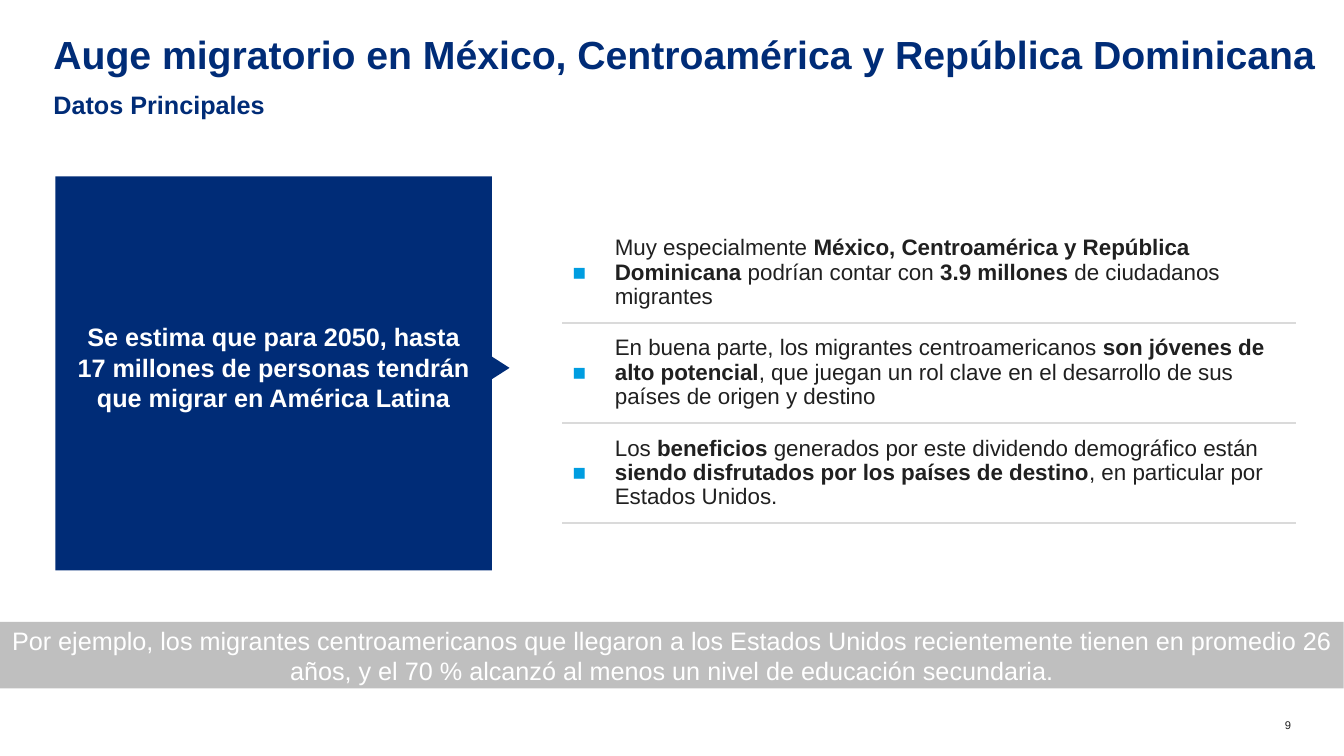
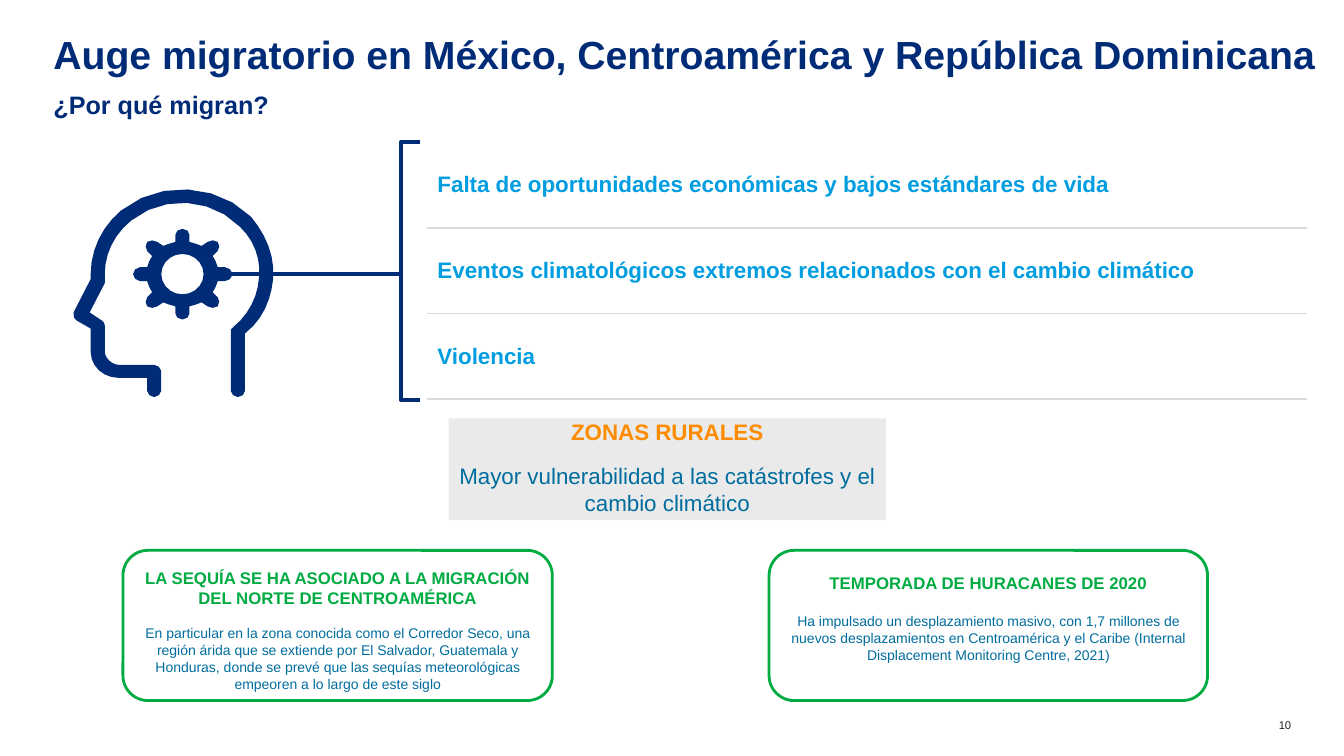
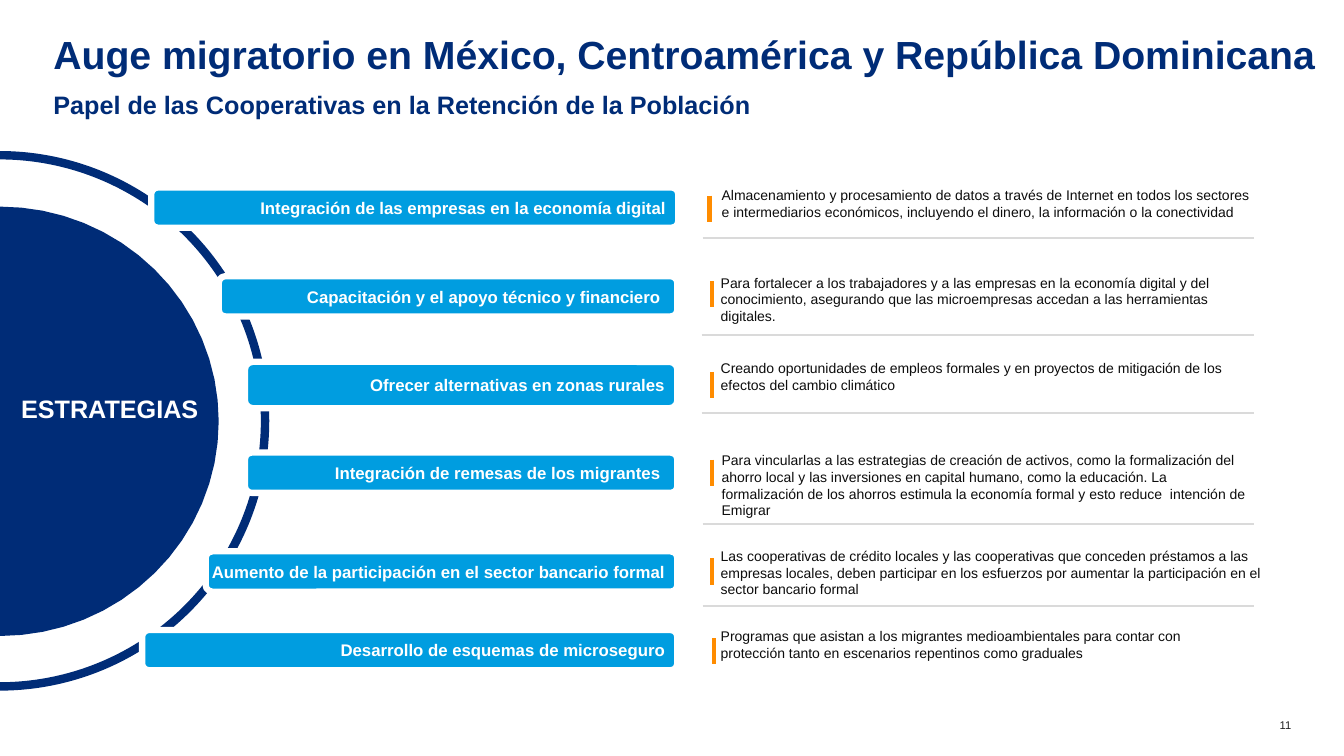
from dataclasses import dataclass
from math import cos, dist, pi, sin
from typing import NamedTuple, Optional

from lxml.etree import SubElement
from pptx import Presentation
from pptx.dml.color import RGBColor
from pptx.enum.shapes import MSO_CONNECTOR, MSO_SHAPE
from pptx.enum.text import MSO_ANCHOR, PP_ALIGN
from pptx.oxml.ns import qn
from pptx.shapes.autoshape import Shape
from pptx.shapes.connector import Connector
from pptx.slide import Slide
from pptx.table import Table, _Cell
from pptx.text.text import TextFrame, _Paragraph
from pptx.util import Inches, Pt

FONT = "Arial"
NAVY = RGBColor(0x00, 0x2C, 0x77)
SKY = RGBColor(0x00, 0x9D, 0xE0)
TEAL = RGBColor(0x00, 0x6D, 0x9E)
GREEN = RGBColor(0x00, 0xAC, 0x41)
ORANGE = RGBColor(0xFF, 0x8C, 0x00)
WHITE = RGBColor(0xFF, 0xFF, 0xFF)
INK = RGBColor(0x20, 0x20, 0x20)
DETAIL_INK = RGBColor(0x0D, 0x0D, 0x0D)
RULE_GREY = RGBColor(0xDA, 0xDA, 0xDA)
BAND_GREY = RGBColor(0xBF, 0xBF, 0xBF)
PANEL_GREY = RGBColor(0xEA, 0xEA, 0xEA)

TITLE = "Auge migratorio en México, Centroamérica y República Dominicana"
Point = tuple[float, float]


class Box(NamedTuple):
    left: float
    top: float
    width: float
    height: float


class Insets(NamedTuple):
    left: float = 0
    top: float = 0
    right: float = 0
    bottom: float = 0


class Run(NamedTuple):
    text: str
    size: float
    color: RGBColor
    bold: bool = False


@dataclass
class Para:
    runs: list[Run]
    align: PP_ALIGN = PP_ALIGN.LEFT
    gap_before: float = 0
    spacing: Optional[float] = None
    bullet: Optional[str] = None


@dataclass
class Card:
    box: Box
    heading: str
    body: str
    top_inset: float
    gap: float


@dataclass
class Strategy:
    label: str
    bar: Box
    detail: str
    detail_box: Box
    tick: Point
    rule: Optional[Point] = None


def add_bullet(paragraph: _Paragraph, symbol: str) -> None:
    properties = paragraph._p.get_or_add_pPr()
    properties.set("marL", str(Inches(0.2)))
    properties.set("indent", str(-Inches(0.2)))
    SubElement(SubElement(properties, qn("a:buClr")), qn("a:srgbClr"), val=str(SKY))
    SubElement(properties, qn("a:buFont"), typeface=FONT)
    SubElement(properties, qn("a:buChar"), char=symbol)


def write(frame: TextFrame, paras: list[Para], insets: Optional[Insets] = None,
          anchor: MSO_ANCHOR = MSO_ANCHOR.TOP, wrap: bool = True) -> None:
    frame.word_wrap = wrap
    frame.vertical_anchor = anchor
    if insets is not None:
        frame.margin_left, frame.margin_top, frame.margin_right, frame.margin_bottom = map(Inches, insets)
    for index, para in enumerate(paras):
        paragraph = frame.add_paragraph() if index else frame.paragraphs[0]
        paragraph.alignment = para.align
        if para.gap_before:
            paragraph.space_before = Pt(para.gap_before)
        if para.spacing:
            paragraph.line_spacing = para.spacing
        if para.bullet:
            add_bullet(paragraph, para.bullet)
        for piece in para.runs:
            run = paragraph.add_run()
            run.text = piece.text
            run.font.name = FONT
            run.font.size = Pt(piece.size)
            run.font.bold = piece.bold
            run.font.color.rgb = piece.color


def add_text(slide: Slide, box: Box, paras: list[Para], insets: Insets = Insets()) -> None:
    write(slide.shapes.add_textbox(*map(Inches, box)).text_frame, paras, insets)


def paint(shape: Shape, fill: Optional[RGBColor], line: Optional[RGBColor] = None,
          line_width: float = 0) -> Shape:
    shape.shadow.inherit = False
    if fill is None:
        shape.fill.background()
    else:
        shape.fill.solid()
        shape.fill.fore_color.rgb = fill
    if line is None:
        shape.line.fill.background()
    else:
        shape.line.color.rgb = line
        shape.line.width = Pt(line_width)
    return shape


def add_shape(slide: Slide, kind: MSO_SHAPE, box: Box, fill: Optional[RGBColor],
              line: Optional[RGBColor] = None, line_width: float = 0) -> Shape:
    return paint(slide.shapes.add_shape(kind, *map(Inches, box)), fill, line, line_width)


def add_line(slide: Slide, start: Point, end: Point, color: RGBColor, width: float) -> Connector:
    line = slide.shapes.add_connector(MSO_CONNECTOR.STRAIGHT, *map(Inches, start + end))
    line.line.color.rgb = color
    line.line.width = Pt(width)
    SubElement(line._element.spPr, qn("a:effectLst"))
    return line


def add_outline(slide: Slide, contours: list[list[Point]], close: bool = True) -> Shape:
    """Draw one freeform from one or more contours given in inches."""
    emu = [[(Inches(x), Inches(y)) for x, y in contour] for contour in contours]
    builder = slide.shapes.build_freeform(*emu[0][0])
    for index, contour in enumerate(emu):
        if index:
            builder.move_to(*contour[0])
        builder.add_line_segments(contour[1:], close=close)
    return builder.convert_to_shape()


def trace(start: Point, segments: list[tuple]) -> list[Point]:
    """Flatten a path: two numbers are a straight step, six a Bézier curve."""
    points = [start]
    for segment in segments:
        if len(segment) == 2:
            points.append(segment)
            continue
        x0, y0 = points[-1]
        x1, y1, x2, y2, x3, y3 = segment
        steps = 6 if dist((x0, y0), (x3, y3)) > 0.15 else 2
        for step in range(1, steps + 1):
            t = step / steps
            a, b, c, d = (1 - t) ** 3, 3 * t * (1 - t) ** 2, 3 * t * t * (1 - t), t ** 3
            points.append((a * x0 + b * x1 + c * x2 + d * x3, a * y0 + b * y1 + c * y2 + d * y3))
    return points


def ellipse(center: Point, rx: float, ry: float, start: float, end: float, steps: int) -> list[Point]:
    angles = [start + (end - start) * step / steps for step in range(steps + 1)]
    return [(center[0] + rx * cos(angle), center[1] + ry * sin(angle)) for angle in angles]


def add_grid(slide: Slide, box: Box, columns: list[float], rows: int) -> Table:
    table = slide.shapes.add_table(rows, len(columns), *map(Inches, box)).table
    table.first_row = table.horz_banding = False
    for column, width in zip(table.columns, columns):
        column.width = Inches(width)
    for index, row in enumerate(table.rows):
        row.height = Inches(box.height / rows)
        for cell in row.cells:
            rule_cell(cell, top=index > 0)
    return table


def rule_cell(cell: _Cell, top: bool) -> None:
    """Leave a cell unfilled, with horizontal rules only."""
    properties = cell._tc.get_or_add_tcPr()
    for side, ruled in (("L", False), ("R", False), ("T", top), ("B", True)):
        edge = SubElement(properties, qn(f"a:ln{side}"), w=str(Pt(1.5)))
        if ruled:
            SubElement(SubElement(edge, qn("a:solidFill")), qn("a:srgbClr"), val=str(RULE_GREY))
        else:
            SubElement(edge, qn("a:noFill"))
    cell.fill.background()


def start_slide(deck: Presentation, subtitle: str, number: int) -> Slide:
    slide = deck.slides.add_slide(deck.slide_layouts[6])
    add_text(slide, Box(0.53, 0.39, 12.67, 0.54), [Para([Run(TITLE, 28, NAVY, True)], spacing=0.8)])
    add_text(slide, Box(0.53, 0.89, 12.28, 0.35), [Para([Run(subtitle, 18, NAVY, True)])])
    add_text(slide, Box(12.5, 7.13, 0.31, 0.13), [Para([Run(str(number), 8, INK)], PP_ALIGN.RIGHT)])
    return slide


FACTS = [
    [("Muy especialmente ", False), ("México, Centroamérica y República Dominicana ", True),
     ("podrían contar con ", False), ("3.9 millones ", True), ("de ciudadanos migrantes", False)],
    [("En buena parte, los migrantes centroamericanos ", False),
     ("son jóvenes de alto potencial", True),
     (", que juegan un rol clave en el desarrollo de sus países de origen y destino", False)],
    [("Los ", False), ("beneficios ", True), ("generados por este dividendo demográfico están ", False),
     ("siendo disfrutados por los países de destino", True),
     (", en particular por Estados Unidos.", False)],
]


def build_facts(deck: Presentation) -> None:
    slide = start_slide(deck, "Datos Principales", 9)
    add_shape(slide, MSO_SHAPE.RECTANGLE, Box(0.55, 1.75, 4.33, 3.91), NAVY)
    pointer = add_shape(slide, MSO_SHAPE.ISOSCELES_TRIANGLE, Box(4.85, 3.56, 0.23, 0.18), NAVY)
    pointer.rotation = 90
    estimate = "Se estima que para 2050, hasta 17 millones de personas tendrán que migrar en América Latina"
    add_text(slide, Box(0.73, 3.19, 3.97, 0.91), [Para([Run(estimate, 18, WHITE, True)], PP_ALIGN.CENTER)])

    table = add_grid(slide, Box(5.58, 2.21, 7.28, 2.98), [0.42, 6.86], len(FACTS))
    for row, fact in zip(table.rows, FACTS):
        marker, statement = row.cells
        write(marker.text_frame, [Para([Run(" ", 16, SKY)], bullet="■")])
        write(statement.text_frame, [Para([Run(text, 16, INK, bold) for text, bold in fact], spacing=0.98)])
        marker.vertical_anchor = statement.vertical_anchor = MSO_ANCHOR.MIDDLE

    example = ("Por ejemplo, los migrantes centroamericanos que llegaron a los Estados Unidos recientemente "
               "tienen en promedio 26 años, y el 70 % alcanzó al menos un nivel de educación secundaria.")
    band = add_shape(slide, MSO_SHAPE.RECTANGLE, Box(0, 6.17, 13.33, 0.66), BAND_GREY)
    write(band.text_frame, [Para([Run(example, 18, WHITE)], PP_ALIGN.CENTER)], anchor=MSO_ANCHOR.MIDDLE)


HEAD_START = (2.49, 2.15)
HEAD = [
    (2.16, 1.82, 1.58, 1.78, 1.2, 2.09), (1.01, 2.25, 0.9, 2.48, 0.9, 2.72), (0.9, 2.77),
    (0.73, 3.1), (0.73, 3.14, 0.73, 3.17, 0.76, 3.18), (0.9, 3.26), (0.9, 3.49),
    (0.9, 3.64, 1.03, 3.75, 1.18, 3.75), (1.46, 3.75), (1.46, 3.88),
    (1.46, 3.91, 1.5, 3.94, 1.53, 3.94), (1.56, 3.94, 1.6, 3.91, 1.6, 3.88), (1.6, 3.68),
    (1.6, 3.65, 1.56, 3.62, 1.53, 3.62), (1.18, 3.62), (1.11, 3.62, 1.04, 3.55, 1.04, 3.49),
    (1.04, 3.23), (1.04, 3.22, 1.03, 3.18, 1.01, 3.18), (0.89, 3.1), (1.04, 2.81),
    (1.04, 2.8, 1.04, 2.8, 1.04, 2.78), (1.04, 2.72), (1.04, 2.52, 1.13, 2.33, 1.3, 2.19),
    (1.62, 1.93, 2.1, 1.96, 2.38, 2.25), (2.52, 2.38, 2.59, 2.57, 2.57, 2.75),
    (2.56, 2.94, 2.47, 3.12, 2.31, 3.25), (2.29, 3.25, 2.29, 3.28, 2.29, 3.3), (2.29, 3.88),
    (2.29, 3.91, 2.33, 3.94, 2.36, 3.94), (2.4, 3.94, 2.43, 3.91, 2.43, 3.88), (2.43, 3.31),
    (2.61, 3.17, 2.69, 2.97, 2.71, 2.77), (2.73, 2.54, 2.64, 2.33, 2.49, 2.15),
]
GEAR_CENTER = (1.81, 2.72)
GEAR_QUARTER = [
    (0.04, -0.45, 0.07, -0.42, 0.07, -0.39), (0.07, -0.32), (0.12, -0.31, 0.16, -0.29, 0.19, -0.28),
    (0.25, -0.32), (0.28, -0.34, 0.32, -0.34, 0.35, -0.32), (0.37, -0.29, 0.37, -0.26, 0.35, -0.23),
    (0.3, -0.18), (0.32, -0.15, 0.34, -0.11, 0.35, -0.07), (0.42, -0.07),
    (0.46, -0.07, 0.49, -0.03, 0.49, 0),
]
CAUSES = [
    "Falta de oportunidades económicas y bajos estándares de vida",
    "Eventos climatológicos extremos relacionados con el cambio climático",
    "Violencia",
]
CARDS = [
    Card(Box(1.22, 5.46, 4.26, 1.49),
         "LA SEQUÍA SE HA ASOCIADO A LA MIGRACIÓN DEL NORTE DE CENTROAMÉRICA",
         "En particular en la zona conocida como el Corredor Seco, una región árida que se extiende por "
         "El Salvador, Guatemala y Honduras, donde se prevé que las sequías meteorológicas empeoren a lo "
         "largo de este siglo", 0.1, 12),
    Card(Box(7.63, 5.46, 4.35, 1.49), "TEMPORADA DE HURACANES DE 2020",
         "Ha impulsado un desplazamiento masivo, con 1,7 millones de nuevos desplazamientos en "
         "Centroamérica y el Caribe (Internal Displacement Monitoring Centre, 2021)", 0.15, 14),
]


def gear_outline() -> list[Point]:
    """Mirror a quarter of the gear into the whole rim."""
    quarter = trace((0, -0.45), GEAR_QUARTER)
    half = quarter + [(x, -y) for x, y in reversed(quarter[:-1])]
    rim = half + [(-x, y) for x, y in reversed(half[1:-1])]
    return [(GEAR_CENTER[0] + x, GEAR_CENTER[1] + y) for x, y in rim]


def build_causes(deck: Presentation) -> None:
    slide = start_slide(deck, "¿Por qué migran?", 10)
    link = add_line(slide, (2.24, 2.72), (3.97, 2.72), NAVY, 3)
    SubElement(link.line._get_or_add_ln(), qn("a:headEnd"), type="oval")
    bracket = [(4.17, 1.41), (3.98, 1.41), (3.98, 3.97), (4.17, 3.97)]
    paint(add_outline(slide, [bracket], close=False), None, NAVY, 3)

    table = add_grid(slide, Box(4.24, 1.41, 8.73, 2.55), [8.73], len(CAUSES))
    for row, cause in zip(table.rows, CAUSES):
        cell = row.cells[0]
        write(cell.text_frame, [Para([Run(cause, 16, SKY, True)])])
        cell.vertical_anchor = MSO_ANCHOR.MIDDLE

    paint(add_outline(slide, [trace(HEAD_START, HEAD)]), NAVY)
    paint(add_outline(slide, [gear_outline(), ellipse(GEAR_CENTER, 0.21, 0.2, 2 * pi, 0, 20)]), NAVY)

    for card in CARDS:
        frame = add_shape(slide, MSO_SHAPE.ROUNDED_RECTANGLE, card.box, WHITE, GREEN, 2).text_frame
        write(frame, [Para([Run(card.heading, 12, GREEN, True)], PP_ALIGN.CENTER),
                      Para([Run(card.body, 10, TEAL)], PP_ALIGN.CENTER, card.gap)],
              Insets(0.08, card.top_inset, 0.08, 0.08))

    rural = add_shape(slide, MSO_SHAPE.RECTANGLE, Box(4.45, 4.15, 4.34, 1.01), PANEL_GREY)
    vulnerability = "Mayor vulnerabilidad a las catástrofes y el cambio climático"
    write(rural.text_frame, [Para([Run("ZONAS RURALES", 16, ORANGE, True)], PP_ALIGN.CENTER),
                             Para([Run(vulnerability, 16, TEAL)], PP_ALIGN.CENTER, 12)], Insets())


STRATEGIES = [
    Strategy("Integración de las empresas en la economía digital", Box(1.5, 1.86, 5.23, 0.4),
             "Almacenamiento y procesamiento de datos a través de Internet en todos los sectores e "
             "intermediarios económicos, incluyendo el dinero, la información o la conectividad",
             Box(7.16, 1.8, 5.35, 0.44), (7.04, 1.94), (6.97, 2.36)),
    Strategy("Capacitación y el apoyo técnico y financiero ", Box(2.17, 2.74, 4.55, 0.4),
             "Para fortalecer a los trabajadores y a las empresas en la economía digital y del "
             "conocimiento, asegurando que las microempresas accedan a las herramientas digitales.",
             Box(7.15, 2.67, 5.28, 0.61), (7.06, 2.79), (6.96, 3.32)),
    Strategy("Ofrecer alternativas en zonas rurales", Box(2.43, 3.59, 4.29, 0.46),
             "Creando oportunidades de empleos formales y en proyectos de mitigación de los efectos del "
             "cambio climático",
             Box(7.15, 3.52, 5.28, 0.44), (7.06, 3.69), (6.96, 4.1)),
    Strategy("Integración de remesas de los migrantes ", Box(2.43, 4.49, 4.29, 0.4),
             "Para vincularlas a las estrategias de creación de activos, como la formalización del ahorro "
             "local y las inversiones en capital humano, como la educación. La formalización de los "
             "ahorros estimula la economía formal y esto reduce  intención de Emigrar",
             Box(7.16, 4.43, 5.34, 0.77), (7.06, 4.56), (6.97, 5.2)),
    Strategy("Aumento de la participación en el sector bancario formal", Box(2.04, 5.47, 4.68, 0.4),
             "Las cooperativas de crédito locales y las cooperativas que conceden préstamos a las "
             "empresas locales, deben participar en los esfuerzos por aumentar la participación en el "
             "sector bancario formal",
             Box(7.15, 5.38, 5.48, 0.61), (7.06, 5.54), (6.97, 6.01)),
    Strategy("Desarrollo de esquemas de microseguro", Box(1.41, 6.25, 5.31, 0.4),
             "Programas que asistan a los migrantes medioambientales para contar con protección tanto en "
             "escenarios repentinos como graduales",
             Box(7.15, 6.18, 5.28, 0.44), (7.08, 6.33)),
]


def add_strategy(slide: Slide, strategy: Strategy) -> None:
    bar = add_shape(slide, MSO_SHAPE.ROUNDED_RECTANGLE, strategy.bar, SKY, WHITE, 4.5)
    write(bar.text_frame, [Para([Run(strategy.label, 12, WHITE, True)], PP_ALIGN.RIGHT)],
          Insets(right=0.1), MSO_ANCHOR.MIDDLE, wrap=False)
    add_text(slide, strategy.detail_box, [Para([Run(strategy.detail, 10, DETAIL_INK)])],
             Insets(0, 0.05, 0.1, 0.05))
    x, y = strategy.tick
    add_line(slide, (x, y), (x, y + 0.26), ORANGE, 3)
    if strategy.rule:
        add_line(slide, strategy.rule, (12.44, strategy.rule[1]), RULE_GREY, 1.5)


def build_strategies(deck: Presentation) -> None:
    slide = start_slide(deck, "Papel de las Cooperativas en la Retención de la Población", 11)
    paint(add_outline(slide, [ellipse((0, 4.18), 2.17, 2.13, -pi / 2, pi / 2, 32)]), NAVY)
    orbit = add_shape(slide, MSO_SHAPE.ARC, Box(-2.64, 1.54, 5.27, 5.27), None, NAVY, 6)
    orbit.adjustments[0] = 162
    orbit.adjustments[1] = 54
    for strategy in STRATEGIES:
        add_strategy(slide, strategy)
    add_text(slide, Box(0.21, 3.9, 1.83, 0.3), [Para([Run("ESTRATEGIAS", 18, WHITE, True)])])


def main() -> None:
    deck = Presentation()
    deck.slide_width, deck.slide_height = Inches(40 / 3), Inches(7.5)
    build_facts(deck)
    build_causes(deck)
    build_strategies(deck)
    deck.save("out.pptx")


if __name__ == "__main__":
    main()
